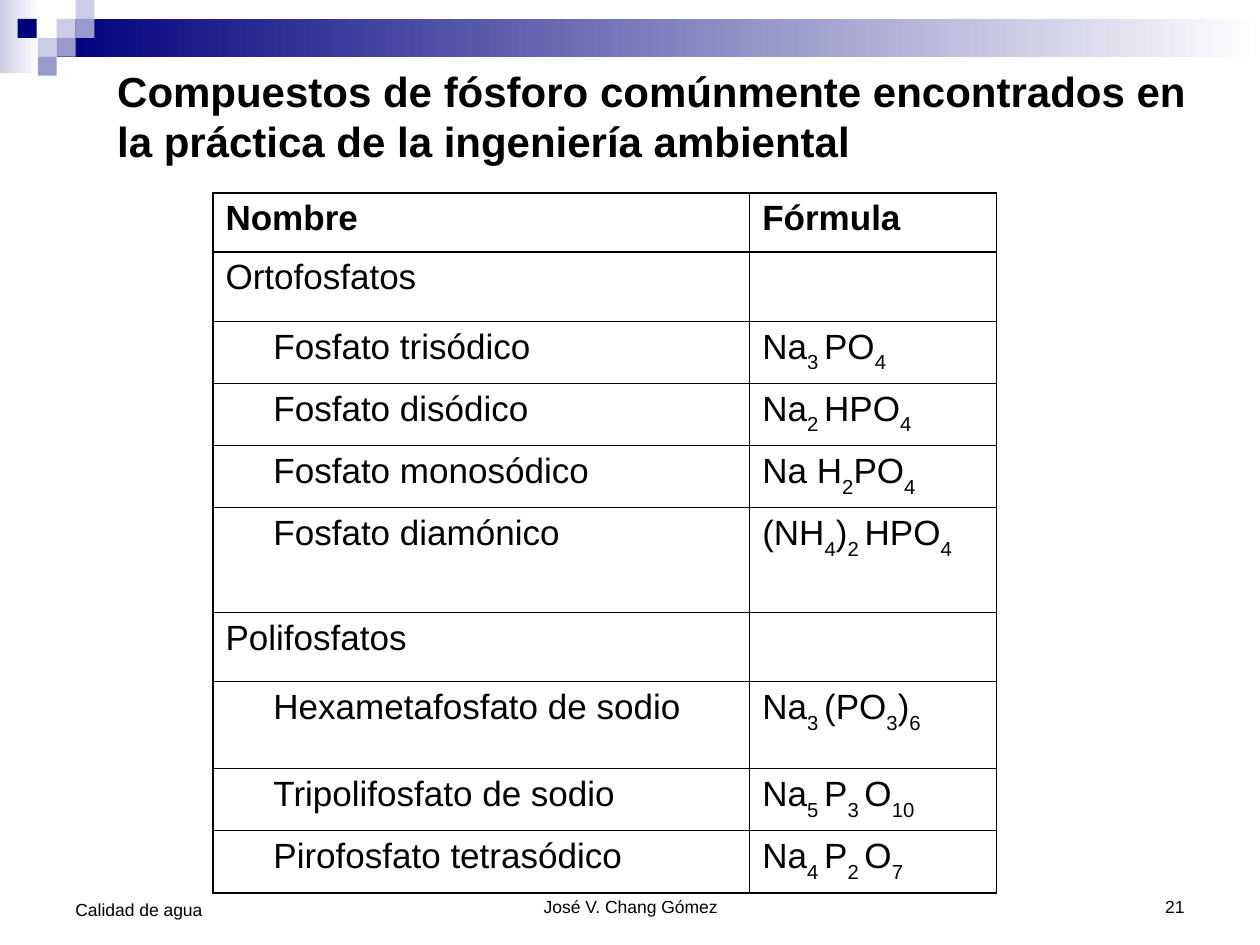
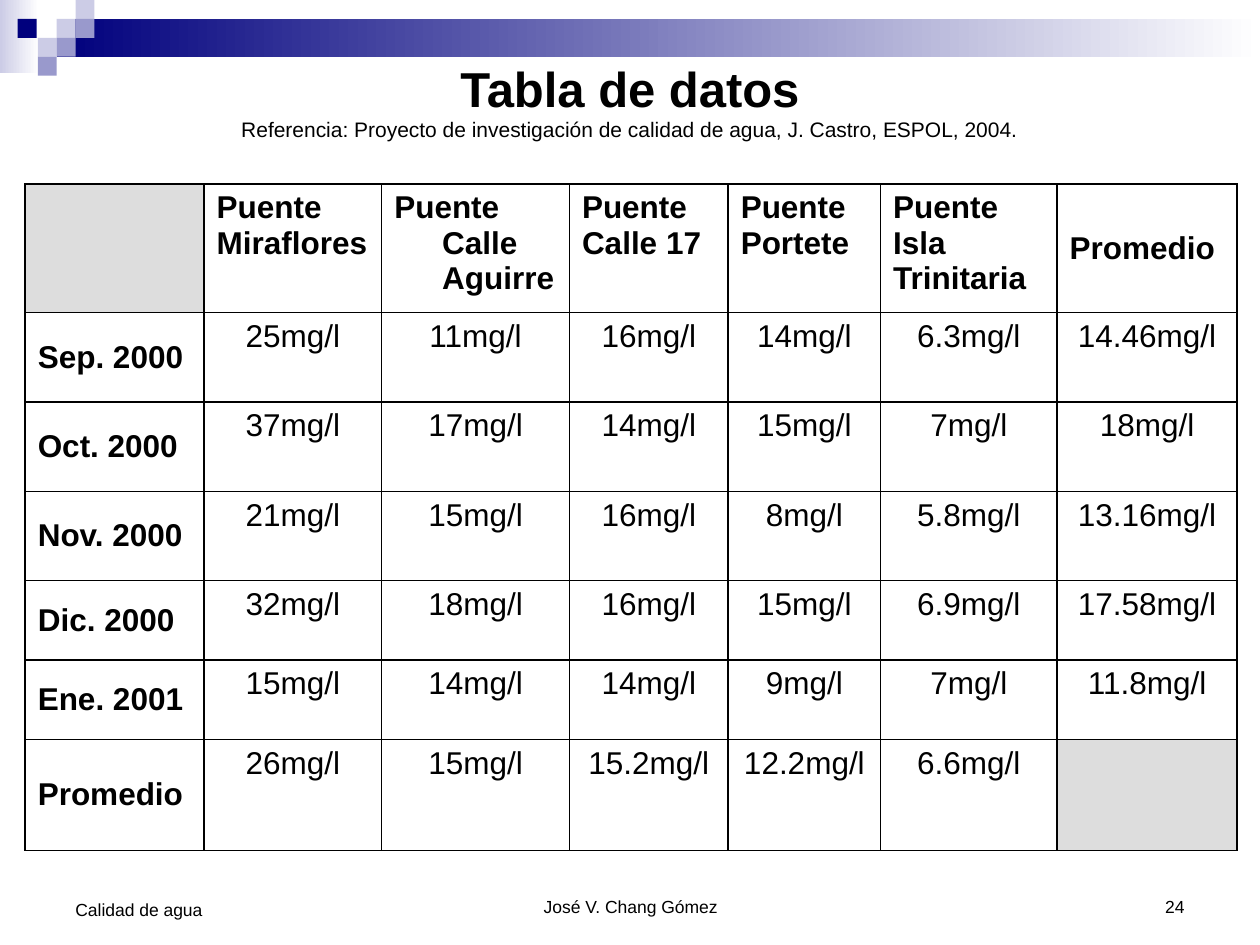
from lxml.etree import SubElement
from pptx import Presentation
from pptx.dml.color import RGBColor
from pptx.enum.shapes import MSO_SHAPE
from pptx.enum.text import MSO_ANCHOR, MSO_AUTO_SIZE, PP_ALIGN
from pptx.oxml import parse_xml
from pptx.oxml.ns import nsdecls, qn
from pptx.util import Inches, Pt

FONT = "Arial"
COLORS = {
    "navy": "00007D",
    "lavender": "CCCCE6",
    "periwinkle": "9999CC",
    "white": "FFFFFF",
    "black": "000000",
    "grey": "DDDDDD",
}
HANG = 0.38


def write_text(paragraph, text, size=18, bold=False, align=PP_ALIGN.LEFT, margin=0, indent=0):
    """Fill a paragraph; in text split by "|", every second piece is a subscript."""
    paragraph.alignment = align
    properties = paragraph._p.get_or_add_pPr()
    properties.set("marL", str(Inches(margin)))
    properties.set("indent", str(Inches(indent)))
    for position, piece in enumerate(text.split("|")):
        run = paragraph.add_run()
        run.text = piece
        run.font.name = FONT
        run.font.size = Pt(size)
        run.font.bold = bold
        run.font.color.rgb = RGBColor.from_string(COLORS["black"])
        if position % 2:
            run._r.get_or_add_rPr().set("baseline", "-30000")


def add_grid(slide, left, top, widths, heights, inner_line):
    """Add a white table with 1 pt outer borders and the given inner line width."""
    rows, columns = len(heights), len(widths)
    table = slide.shapes.add_table(
        rows, columns, Inches(left), Inches(top), Inches(sum(widths)), Inches(sum(heights))
    ).table
    table.first_row = table.horz_banding = False
    for column, width in zip(table.columns, widths):
        column.width = Inches(width)
    for row, height in zip(table.rows, heights):
        row.height = Inches(height)
    for r in range(rows):
        for c in range(columns):
            cell = table.cell(r, c)
            cell.fill.solid()
            cell.fill.fore_color.rgb = RGBColor.from_string(COLORS["white"])
            outer_sides = {"L": c == 0, "R": c == columns - 1, "T": r == 0, "B": r == rows - 1}
            for order, (side, is_outer) in enumerate(outer_sides.items()):
                border = parse_xml(f'<a:ln{side} {nsdecls("a")}/>')
                border.set("w", str(Pt(1 if is_outer else inner_line)))
                solid = SubElement(border, qn("a:solidFill"))
                SubElement(solid, qn("a:srgbClr")).set("val", COLORS["black"])
                cell._tc.get_or_add_tcPr().insert(order, border)
    return table


presentation = Presentation()
presentation.slide_width = Inches(10)
presentation.slide_height = Inches(7.5)
title_only = presentation.slide_layouts[5]

# Shared band, squares, title frame and footers
bands = [(0, 0, 0.31, 0.58, "lavender"), (0.45, 0.15, 9.55, 0.3, "navy")]
SQUARE = 0.15
squares = [
    (0.45, 0.15, "lavender"),
    (0.6, 0, "lavender"),
    (0.6, 0.15, "periwinkle"),
    (0.3, 0.3, "lavender"),
    (0.14, 0.15, "navy"),
    (0.45, 0.3, "periwinkle"),
    (0.3, 0.45, "periwinkle"),
]
title_frames = {21: (0.83, 0.47, 8.74, 0.9), 24: (0.5, 0.36, 9, 0.87)}
slides = []
for number, title_frame in title_frames.items():
    slide = presentation.slides.add_slide(title_only)
    slides.append(slide)

    for left, top, width, height, color in bands + [(x, y, SQUARE, SQUARE, c) for x, y, c in squares]:
        shape = slide.shapes.add_shape(
            MSO_SHAPE.RECTANGLE, Inches(left), Inches(top), Inches(width), Inches(height)
        )
        shape.shadow.inherit = False
        shape.line.fill.background()
        if width == SQUARE:
            shape.fill.solid()
            shape.fill.fore_color.rgb = RGBColor.from_string(COLORS[color])
        else:
            shape.fill.gradient()
            shape.fill.gradient_angle = 0
            for stop, stop_color in zip(shape.fill.gradient_stops, (color, "white")):
                stop.color.rgb = RGBColor.from_string(COLORS[stop_color])

    title = slide.shapes.title
    title.left, title.top, title.width, title.height = map(Inches, title_frame)
    title.text_frame.auto_size = MSO_AUTO_SIZE.NONE
    title.text_frame.vertical_anchor = MSO_ANCHOR.MIDDLE

    footers = [
        ("José V. Chang Gómez", 3.42, 3.17, 0.5, PP_ALIGN.CENTER),
        (str(number), 7.17, 2.33, 0.5, PP_ALIGN.RIGHT),
        ("Calidad de agua", 0.5, 2.33, 0.52, PP_ALIGN.LEFT),
    ]
    for text, left, width, height, align in footers:
        footer = slide.shapes.add_textbox(Inches(left), Inches(6.83), Inches(width), Inches(height))
        footer.text_frame.word_wrap = True
        footer.text_frame.vertical_anchor = MSO_ANCHOR.BOTTOM
        write_text(footer.text_frame.paragraphs[0], text, size=10, align=align)

phosphorus_slide, data_slide = slides

# Phosphorus compounds
write_text(
    phosphorus_slide.shapes.title.text_frame.paragraphs[0],
    "Compuestos de fósforo comúnmente encontrados en la práctica de la ingeniería ambiental",
    size=24,
    bold=True,
)
compounds = [
    ("Nombre", "Fórmula"),
    ("Ortofosfatos", ""),
    ("Fosfato trisódico", "Na|3 |PO|4"),
    ("Fosfato disódico", "Na|2 |HPO|4"),
    ("Fosfato monosódico", "Na H|2|PO|4"),
    ("Fosfato diamónico", "(NH|4|)|2 |HPO|4"),
    ("Polifosfatos", ""),
    ("Hexametafosfato de sodio", "Na|3 |(PO|3|)|6"),
    ("Tripolifosfato de sodio", "Na|5 |P|3 |O|10"),
    ("Pirofosfato tetrasódico", "Na|4 |P|2 |O|7"),
]
row_heights = [0.47, 0.55, 0.47, 0.47, 0.47, 0.83, 0.55, 0.69, 0.47, 0.47]
table = add_grid(phosphorus_slide, 1.69, 1.53, [4.26, 1.96], row_heights, inner_line=0.75)
for r, (name, formula) in enumerate(compounds):
    is_header = r == 0
    is_member = bool(formula) and not is_header
    write_text(
        table.cell(r, 0).text_frame.paragraphs[0], name, size=20, bold=is_header,
        align=PP_ALIGN.JUSTIFY, margin=HANG, indent=0 if is_member else -HANG,
    )
    if formula:
        write_text(
            table.cell(r, 1).text_frame.paragraphs[0], formula, size=20, bold=is_header,
            align=PP_ALIGN.JUSTIFY, margin=HANG, indent=-HANG,
        )

# Measurements by bridge and month
paragraph = data_slide.shapes.title.text_frame.paragraphs[0]
write_text(paragraph, "Tabla de datos", size=28, bold=True, align=PP_ALIGN.CENTER)
paragraph.add_line_break()
write_text(
    paragraph,
    "Referencia: Proyecto de investigación de calidad de agua, J. Castro, ESPOL, 2004.",
    size=12,
    align=PP_ALIGN.CENTER,
)
headings = [
    "", "Puente\nMiraflores", "Puente Calle Aguirre", "Puente\nCalle 17",
    "Puente\nPortete", "Puente\nIsla\nTrinitaria", "Promedio",
]
measurements = {
    "Sep. 2000": ["25", "11", "16", "14", "6.3", "14.46"],
    "Oct. 2000": ["37", "17", "14", "15", "7", "18"],
    "Nov. 2000": ["21", "15", "16", "8", "5.8", "13.16"],
    "Dic. 2000": ["32", "18", "16", "15", "6.9", "17.58"],
    "Ene. 2001": ["15", "14", "14", "9", "7", "11.8"],
    "Promedio": ["26", "15", "15.2", "12.2", "6.6", ""],
}
data_rows = [headings]
for month, values in measurements.items():
    data_rows.append([month] + [f"{value}mg/l" if value else "" for value in values])

column_widths = [1.42, 1.41, 1.49, 1.26, 1.21, 1.4, 1.43]
row_heights = [1.02, 0.71, 0.71, 0.71, 0.63, 0.63, 0.88]
table = add_grid(data_slide, 0.2, 1.46, column_widths, row_heights, inner_line=1)
for r, data_row in enumerate(data_rows):
    for c, text in enumerate(data_row):
        cell = table.cell(r, c)
        if not text:
            cell.fill.fore_color.rgb = RGBColor.from_string(COLORS["grey"])
            continue
        is_heading = r == 0 or c == 0
        if c == 0 or text == "Promedio":
            cell.vertical_anchor = MSO_ANCHOR.MIDDLE
        for position, line in enumerate(text.split("\n")):
            paragraph = cell.text_frame.add_paragraph() if position else cell.text_frame.paragraphs[0]
            write_text(
                paragraph, line, bold=is_heading, margin=HANG, indent=-HANG,
                align=PP_ALIGN.LEFT if is_heading else PP_ALIGN.CENTER,
            )

presentation.save("out.pptx")
